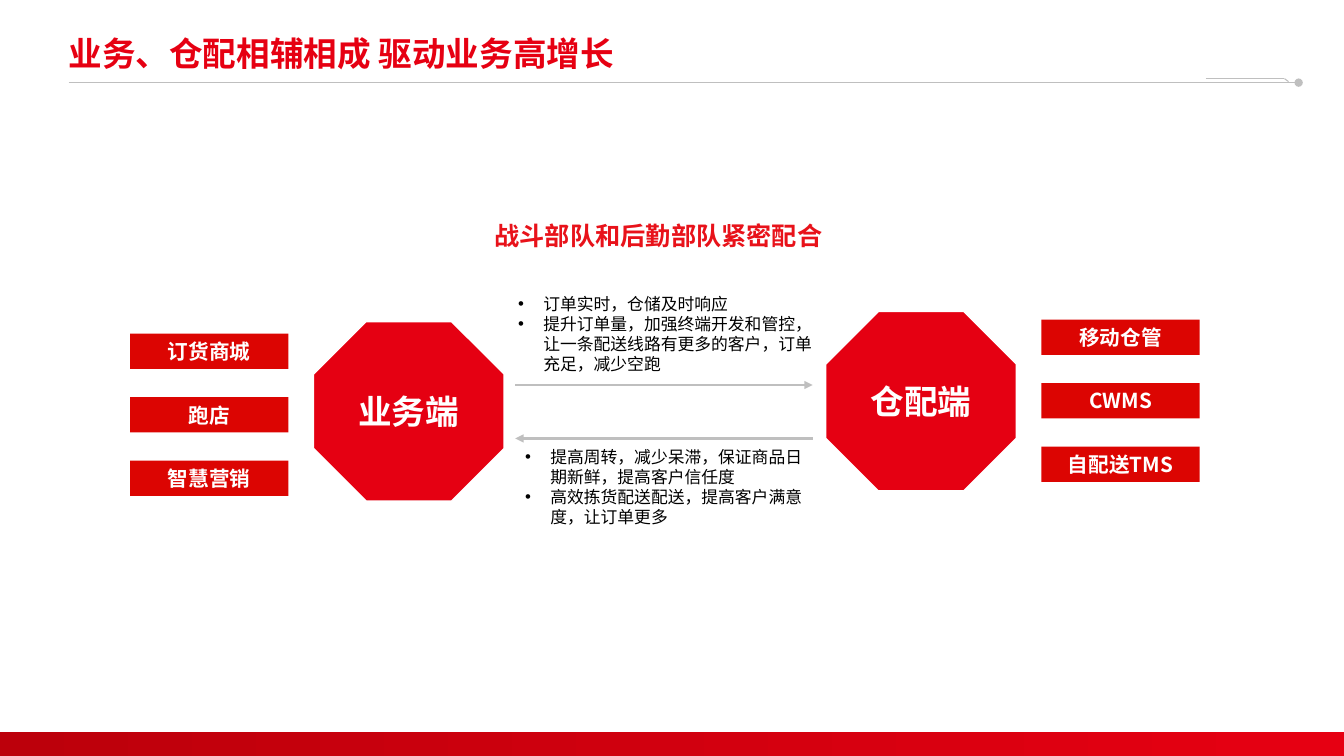
from lxml.etree import SubElement
from pptx import Presentation
from pptx.dml.color import RGBColor
from pptx.enum.shapes import MSO_CONNECTOR, MSO_SHAPE
from pptx.enum.text import MSO_ANCHOR, PP_ALIGN
from pptx.oxml.ns import qn
from pptx.util import Inches, Pt

FONT = "Noto Sans CJK SC"
COLORS = {
    "title": "E60012",
    "band": "BC000B",
    "octagon": "E50012",
    "label": "DC0502",
    "heading": "E8121A",
    "line": "BFBFBF",
    "white": "FFFFFF",
    "black": "000000",
}


def rgb(name):
    return RGBColor.from_string(COLORS[name])


def write(tf, *lines, size, color, bold=False, align=PP_ALIGN.LEFT,
          anchor=MSO_ANCHOR.TOP, spacing=None, bullet=False):
    tf.word_wrap = True
    tf.vertical_anchor = anchor
    for i, line in enumerate(lines):
        p = tf.paragraphs[0] if i == 0 else tf.add_paragraph()
        p.alignment = align
        if spacing:
            p.line_spacing = spacing
        if bullet:
            pPr = p._p.get_or_add_pPr()
            pPr.set("marL", str(Inches(0.25)))
            pPr.set("indent", str(Inches(-0.25)))
            SubElement(pPr, qn("a:buFont"), typeface="Arial")
            SubElement(pPr, qn("a:buChar"), char="•")
        r = p.add_run()
        r.text = line
        r.font.size = Pt(size)
        r.font.bold = bold
        r.font.color.rgb = rgb(color)
        r.font.name = FONT
        SubElement(r._r.get_or_add_rPr(), qn("a:ea"), typeface=FONT)


def add_text(s, x, y, w, h, *lines, **fmt):
    box = s.shapes.add_textbox(Inches(x), Inches(y), Inches(w), Inches(h))
    write(box.text_frame, *lines, **fmt)
    return box


def add_block(s, kind, x, y, w, h, fill, border=None):
    sp = s.shapes.add_shape(kind, Inches(x), Inches(y), Inches(w), Inches(h))
    sp.shadow.inherit = False
    sp.fill.solid()
    sp.fill.fore_color.rgb = rgb(fill)
    if border:
        sp.line.color.rgb = rgb(border)
        sp.line.width = Pt(1)
    else:
        sp.line.fill.background()
    return sp


def add_line(s, x1, y1, x2, y2, width=0.75, end=None):
    line = s.shapes.add_connector(
        MSO_CONNECTOR.STRAIGHT, Inches(x1), Inches(y1), Inches(x2), Inches(y2))
    line.line.color.rgb = rgb("line")
    line.line.width = Pt(width)
    if end:
        SubElement(line.line._get_or_add_ln(), qn("a:tailEnd"), type=end)
    SubElement(line._element.spPr, qn("a:effectLst"))


def add_frame(s):
    band = add_block(s, MSO_SHAPE.RECTANGLE, 0, 7.26, 13.33, 0.24, "band")
    band.fill.gradient()
    band.fill.gradient_angle = 0
    for stop, color, position in zip(band.fill.gradient_stops, ("band", "title"), (0, 1)):
        stop.color.rgb = rgb(color)
        stop.position = position
    add_line(s, 0.68, 0.82, 12.88, 0.82, end="oval")
    add_line(s, 11.96, 0.78, 12.74, 0.78)
    add_line(s, 12.74, 0.78, 12.78, 0.81)
    title = add_text(s, 0.68, 0.3, 10.08, 0.5, "业务、仓配相辅相成 驱动业务高增长",
                     size=24, color="title", bold=True,
                     anchor=MSO_ANCHOR.MIDDLE, spacing=0.9)
    title.text_frame.margin_left = 0


def add_side(s, name, octagon_x, octagon_y, labels, label_x, label_y):
    centred = dict(color="white", bold=True, align=PP_ALIGN.CENTER,
                   anchor=MSO_ANCHOR.MIDDLE)
    octagon = add_block(s, MSO_SHAPE.OCTAGON, octagon_x, octagon_y, 1.89, 1.78,
                        "octagon", border="white")
    write(octagon.text_frame, name, size=24, **centred)
    for i, label in enumerate(labels):
        sp = add_block(s, MSO_SHAPE.RECTANGLE, label_x, label_y + 0.63 * i,
                       1.57, 0.35, "label")
        write(sp.text_frame, label, size=14.7, **centred)


def main():
    prs = Presentation()
    prs.slide_width = Inches(13.33)
    prs.slide_height = Inches(7.5)
    s = prs.slides.add_slide(prs.slide_layouts[6])

    add_frame(s)
    add_line(s, 5.11, 3.82, 8.06, 3.82, width=1.5, end="triangle")
    add_line(s, 8.06, 4.35, 5.11, 4.35, width=1.75, end="triangle")
    add_side(s, "业务端", 3.11, 3.19, ("订货商城", "跑店", "智慧营销"), 1.29, 3.31)
    add_side(s, "仓配端", 8.19, 3.09, ("移动仓管", "CWMS", "自配送TMS"), 10.33, 3.17)

    notes = dict(size=12, color="black", bullet=True)
    add_text(s, 5.04, 2.86, 3.18, 0.91,
             "订单实时，仓储及时响应",
             "提升订单量，加强终端开发和管控，让一条配送线路有更多的客户，订单充足，减少空跑",
             **notes)
    add_text(s, 5.11, 4.38, 3.04, 1.11,
             "提高周转，减少呆滞，保证商品日期新鲜，提高客户信任度",
             "高效拣货配送配送，提高客户满意度，让订单更多",
             **notes)
    add_text(s, 2.39, 2.14, 8.28, 0.4, "战斗部队和后勤部队紧密配合",
             size=18, color="heading", bold=True, align=PP_ALIGN.CENTER)

    prs.save("out.pptx")


if __name__ == "__main__":
    main()
